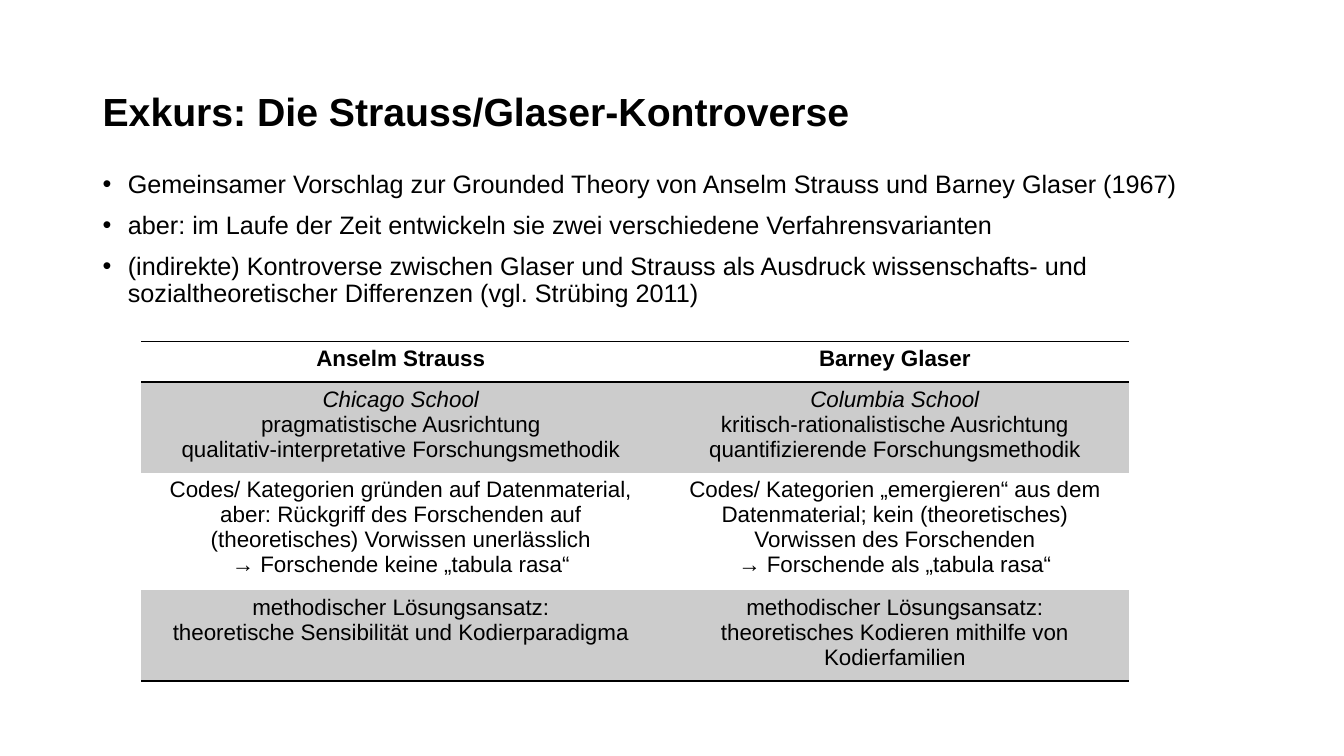
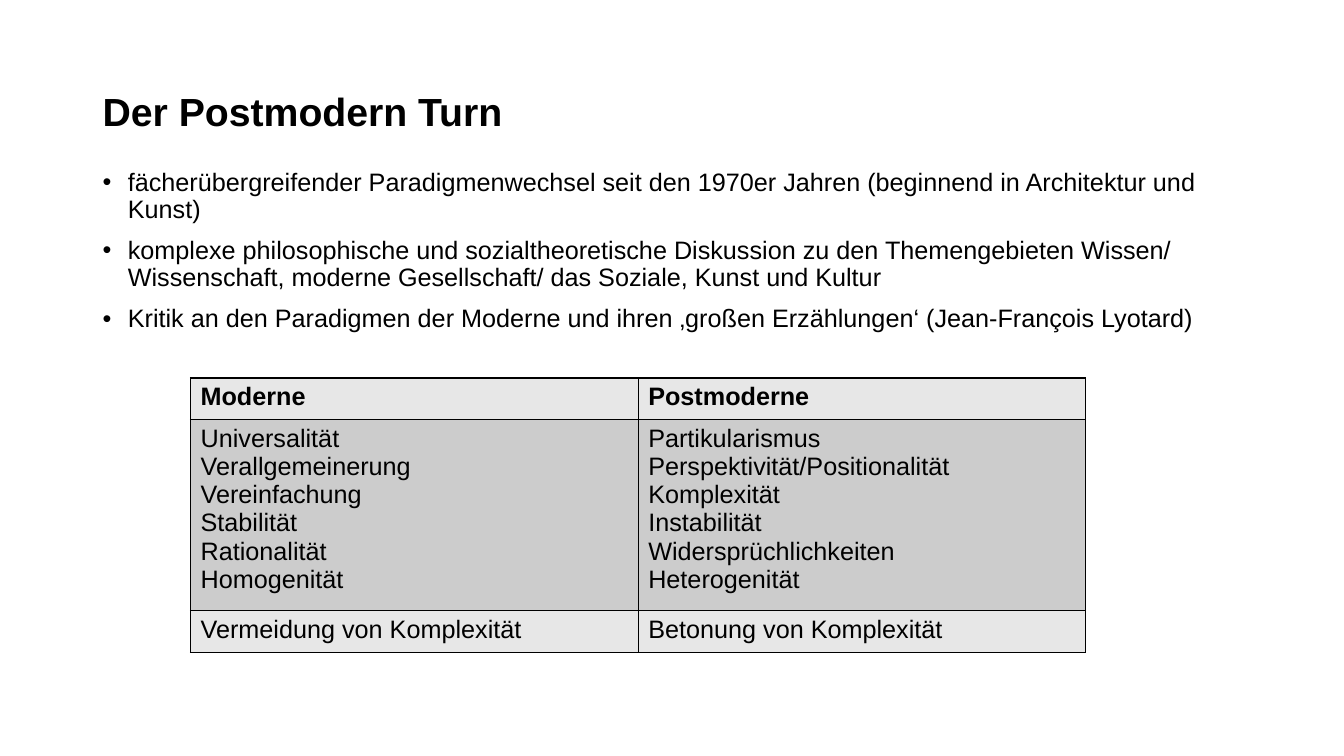
from pptx import Presentation
from pptx.dml.color import RGBColor
from pptx.enum.text import MSO_ANCHOR as Anchor, PP_ALIGN as Align
from pptx.oxml.ns import qn
from pptx.util import Emu, Pt
from lxml.etree import SubElement

SCALE = 9144  # EMU per px, 100 px to the inch
FONT = "Arial"
COLORS = {"ink": "000000", "paper": "FFFFFF", "band": "CCCCCC", "light": "E7E7E7"}
NO_STYLE = "{2D5ABB26-0587-4C30-8999-92F81FD0307C}"


def px(length):
    return Emu(length * SCALE)


def rgb(name):
    return RGBColor.from_string(COLORS[name])


def write(frame, text, size=18, bold=False, italic_first=False, align=Align.LEFT,
          spacing=None, before=0, bullet=False):
    """Fill a text frame, one paragraph for each line of text."""
    for index, line in enumerate(text.split("\n")):
        para = frame.add_paragraph() if index else frame.paragraphs[0]
        para.alignment = align
        if spacing:
            para.line_spacing = spacing
        if index and before:
            para.space_before = Pt(before)
        if bullet:
            props = para._p.get_or_add_pPr()
            props.set("marL", str(px(25)))
            props.set("indent", str(px(-25)))
            SubElement(props, qn("a:buFont"), typeface=FONT)
            SubElement(props, qn("a:buChar"), char="•")
        span = para.add_run()
        span.text = line
        span.font.name, span.font.size = FONT, Pt(size)
        span.font.bold = bold
        span.font.italic = italic_first and index == 0
        span.font.color.rgb = rgb("ink")


class Deck:
    def __init__(self):
        self.deck = Presentation()
        self.deck.slide_width, self.deck.slide_height = px(1333), px(750)
        self.page = None

    def add_page(self, title):
        self.page = self.deck.slides.add_slide(self.deck.slide_layouts[6])
        self.page.background.fill.solid()
        self.page.background.fill.fore_color.rgb = rgb("paper")
        self.add_text(title, 40, 145, anchor=Anchor.MIDDLE, size=28, bold=True)

    def add_text(self, text, top, height, anchor=Anchor.TOP, **style):
        box = self.page.shapes.add_textbox(px(92), px(top), px(1150), px(height))
        box.text_frame.word_wrap = True
        box.text_frame.vertical_anchor = anchor
        write(box.text_frame, text, spacing=0.9, **style)

    def add_bullets(self, text, top):
        self.add_text(text, top, 511, before=10, bullet=True)

    def add_table(self, rows, left, top, widths, heights, fills, edges, italic_row=None, **style):
        """fills has one colour name or None per row, edges one string of sides per row."""
        table_frame = self.page.shapes.add_table(
            len(rows), len(widths), px(left), px(top), px(sum(widths)), px(sum(heights)))
        table = table_frame.table
        table._tbl.tblPr.find(qn("a:tableStyleId")).text = NO_STYLE
        table.first_row = table.horz_banding = False
        for column, width in zip(table.columns, widths):
            column.width = px(width)
        for index, texts in enumerate(rows):
            table.rows[index].height = px(heights[index])
            for cell, text in zip(table.rows[index].cells, texts):
                self.set_borders(cell, edges[index])
                if fills[index]:
                    cell.fill.solid()
                    cell.fill.fore_color.rgb = rgb(fills[index])
                else:
                    cell.fill.background()
                write(cell.text_frame, text, bold=index == 0,
                      italic_first=index == italic_row, **style)

    def set_borders(self, cell, sides):
        props = cell._tc.get_or_add_tcPr()
        for side in "LRTB":
            line = SubElement(props, qn("a:ln" + side), w=str(Pt(1)))
            if side in sides:
                fill = SubElement(line, qn("a:solidFill"))
                SubElement(fill, qn("a:srgbClr"), val=COLORS["ink"])
            else:
                SubElement(line, qn("a:noFill"))


def main():
    talk = Deck()

    # Strauss and Glaser
    talk.add_page("Exkurs: Die Strauss/Glaser-Kontroverse")
    talk.add_bullets(
        "Gemeinsamer Vorschlag zur Grounded Theory von Anselm Strauss und Barney Glaser (1967)\n"
        "aber: im Laufe der Zeit entwickeln sie zwei verschiedene Verfahrensvarianten\n"
        "(indirekte) Kontroverse zwischen Glaser und Strauss als Ausdruck wissenschafts- und "
        "sozialtheoretischer Differenzen (vgl. Strübing 2011)", top=165)
    schools = [
        ("Anselm Strauss", "Barney Glaser"),
        ("Chicago School\npragmatistische Ausrichtung\n"
         "qualitativ-interpretative Forschungsmethodik",
         "Columbia School\nkritisch-rationalistische Ausrichtung\n"
         "quantifizierende Forschungsmethodik"),
        ("Codes/ Kategorien gründen auf Datenmaterial, aber: Rückgriff des Forschenden auf "
         "(theoretisches) Vorwissen unerlässlich\n→ Forschende keine „tabula rasa“",
         "Codes/ Kategorien „emergieren“ aus dem Datenmaterial; kein (theoretisches) "
         "Vorwissen des Forschenden\n→ Forschende als „tabula rasa“"),
        ("methodischer Lösungsansatz:\ntheoretische Sensibilität und Kodierparadigma",
         "methodischer Lösungsansatz:\ntheoretisches Kodieren mithilfe von Kodierfamilien"),
    ]
    talk.add_table(schools, 140, 339, widths=[515, 465], heights=[40, 89, 115, 89],
                   fills=[None, "band", None, "band"], edges=["TB", "T", "", "B"],
                   italic_row=1, size=16, align=Align.CENTER)

    # Modern and postmodern
    talk.add_page("Der Postmodern Turn")
    talk.add_bullets(
        "fächerübergreifender Paradigmenwechsel seit den 1970er Jahren "
        "(beginnend in Architektur und Kunst)\n"
        "komplexe philosophische und sozialtheoretische Diskussion zu den Themengebieten "
        "Wissen/ Wissenschaft, moderne Gesellschaft/ das Soziale, Kunst und Kultur\n"
        "Kritik an den Paradigmen der Moderne und ihren ‚großen Erzählungen‘ "
        "(Jean-François Lyotard)", top=163)
    eras = [
        ("Moderne", "Postmoderne"),
        ("Universalität\nVerallgemeinerung\nVereinfachung\nStabilität\nRationalität\nHomogenität",
         "Partikularismus\nPerspektivität/Positionalität\nKomplexität\nInstabilität\n"
         "Widersprüchlichkeiten\nHeterogenität"),
        ("Vermeidung von Komplexität", "Betonung von Komplexität"),
    ]
    talk.add_table(eras, 189, 375, widths=[444, 444], heights=[41, 179, 41],
                   fills=["light", "band", "light"], edges=["LRTB"] * 3)

    talk.deck.save("out.pptx")


if __name__ == "__main__":
    main()
